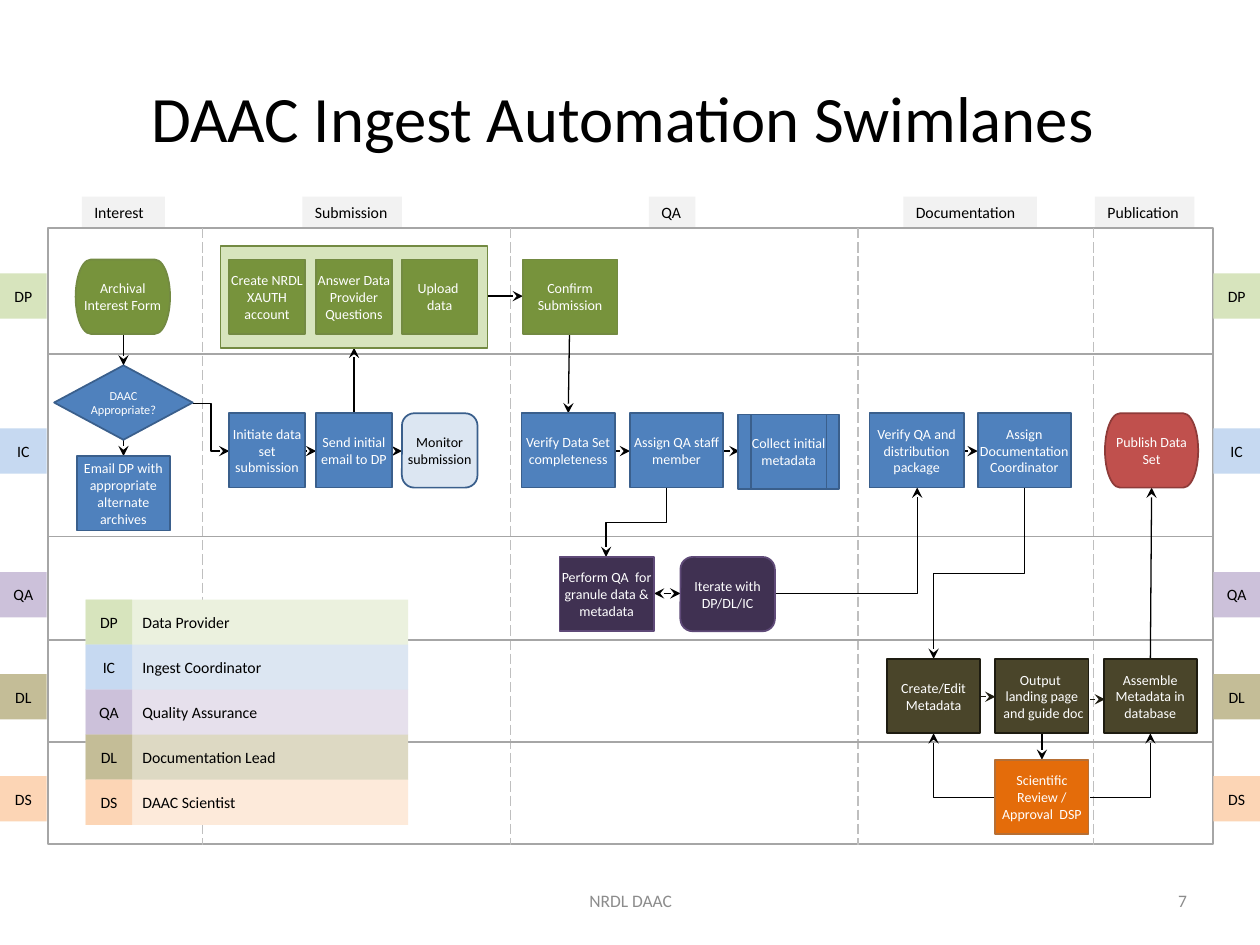
from lxml import etree
from pptx import Presentation
from pptx import util as u
from pptx.dml.color import RGBColor
from pptx.enum import dml, shapes, text
from pptx.oxml.ns import qn

BLACK, WHITE = RGBColor(0, 0, 0), RGBColor(255, 255, 255)
FOOTER_GRAY = RGBColor(0x8C, 0x8C, 0x8C)
HEADER_GRAY = RGBColor(0xF2, 0xF2, 0xF2)
FRAME_GRAY = RGBColor(0xA6, 0xA6, 0xA6)
DASH_GRAY = RGBColor(0xBF, 0xBF, 0xBF)
PALE_GREEN, PALE_BLUE = RGBColor(0xD7, 0xE4, 0xBD), RGBColor(0xDC, 0xE6, 0xF2)
GREEN, GREEN_EDGE = RGBColor(0x77, 0x93, 0x3C), RGBColor(0x73, 0x8A, 0x42)
BLUE, BLUE_EDGE = RGBColor(0x4F, 0x81, 0xBD), RGBColor(0x3A, 0x5F, 0x8C)
RED, RED_EDGE = RGBColor(0xC0, 0x50, 0x4D), RGBColor(0x8E, 0x3B, 0x39)
PURPLE, PURPLE_EDGE = RGBColor(0x40, 0x31, 0x52), RGBColor(0x5F, 0x4A, 0x78)
BROWN, BROWN_EDGE = RGBColor(0x4A, 0x45, 0x2A), RGBColor(0x1E, 0x1C, 0x11)
ORANGE, ORANGE_EDGE = RGBColor(0xE4, 0x6C, 0x0A), RGBColor(0xB7, 0x6F, 0x34)

Kind, Align, Anchor = shapes.MSO_SHAPE, text.PP_ALIGN, text.MSO_ANCHOR
RECT, STEP = Kind.RECTANGLE, Kind.FLOWCHART_PROCESS
ROUNDED, ENDPOINT = Kind.FLOWCHART_ALTERNATE_PROCESS, Kind.FLOWCHART_TERMINATOR

presentation = Presentation()
presentation.slide_width, presentation.slide_height = u.Inches(10), u.Inches(7.5)
slide = presentation.slides.add_slide(presentation.slide_layouts[6])


def add_box(words, left, top, width, height, kind=RECT, fill=None, edge=None, size=9,
            color=BLACK, align=Align.CENTER, anchor=Anchor.MIDDLE, insets=(0.1, 0.05, 0.1, 0.05)):
    """Add a shape, or a text box when kind is None; each line of words is a paragraph."""
    place = [u.Inches(value) for value in (left, top, width, height)]
    if kind is None:
        shape = slide.shapes.add_textbox(*place)
    else:
        shape = slide.shapes.add_shape(kind, *place)
        shape.shadow.inherit = False
        if fill is None:
            shape.fill.background()
        else:
            shape.fill.solid()
            shape.fill.fore_color.rgb = fill
        if edge is None:
            shape.line.fill.background()
        else:
            shape.line.color.rgb = edge
            shape.line.width = u.Pt(1)
    if not words:
        return
    frame = shape.text_frame
    frame.word_wrap = True
    frame.vertical_anchor = anchor
    frame.margin_left, frame.margin_top, frame.margin_right, frame.margin_bottom = map(u.Inches, insets)
    frame.text = words
    for paragraph in frame.paragraphs:
        paragraph.alignment = align
        font = paragraph.runs[0].font
        font.name, font.size, font.color.rgb = "Calibri", u.Pt(size), color


def add_line(x1, y1, x2, y2, bend=None, color=BLACK, dash=None, head=False, tail=True):
    """Add a connector; bend is None, "corner", "across" or "down" (starts vertically, ends lower left)."""
    if bend == "down":
        center_x, center_y = (x1 + x2) / 2, (y1 + y2) / 2
        half_width, half_height = (y2 - y1) / 2, (x1 - x2) / 2
        x1, x2 = center_x - half_width, center_x + half_width
        y1, y2 = center_y - half_height, center_y + half_height
    kind = shapes.MSO_CONNECTOR.ELBOW if bend else shapes.MSO_CONNECTOR.STRAIGHT
    connector = slide.shapes.add_connector(kind, *map(u.Inches, (x1, y1, x2, y2)))
    properties = connector._element.spPr
    if bend == "down":
        connector.rotation = 90
    if bend == "corner":
        properties.find(qn("a:prstGeom")).set("prst", "bentConnector2")
    connector.line.color.rgb = color
    connector.line.width = u.Pt(0.75)
    if dash:
        connector.line.dash_style = dash
    outline = properties.find(qn("a:ln"))
    for end, wanted in (("a:headEnd", head), ("a:tailEnd", tail)):
        if wanted:
            etree.SubElement(outline, qn(end)).set("type", "stealth")
    etree.SubElement(properties, qn("a:effectLst"))


add_box("DAAC Ingest Automation Swimlanes ", 0.5, 0.3, 9, 1.25, kind=None, size=37,
        insets=(0.08, 0.04, 0.08, 0.04))

# Phase headings
for phase, left, width in [("Interest", 0.65, 0.66), ("Submission", 2.4, 0.79), ("QA", 5.15, 0.37),
                           ("Documentation", 7.17, 1.06), ("Publication", 8.69, 0.79)]:
    add_box(phase, left, 1.56, width, 0.25, fill=HEADER_GRAY, align=Align.LEFT, anchor=Anchor.TOP)

# Swimlane grid
add_box("", 0.38, 1.81, 9.25, 4.89, edge=FRAME_GRAY)
for x in (1.61, 4.05, 6.81, 8.68):
    add_line(x, 1.81, x, 6.71, color=DASH_GRAY, dash=dml.MSO_LINE.LONG_DASH, tail=False)
for y in (2.81, 4.26, 5.08, 5.89):
    add_line(0.38, y, 9.63, y, color=FRAME_GRAY, tail=False)

# Lane tags on both sides, and the legend
roles = [
    ("DP", "Data Provider", 2.17, PALE_GREEN, RGBColor(0xEB, 0xF1, 0xDE)),
    ("IC", "Ingest Coordinator", 3.4, RGBColor(0xC6, 0xD9, 0xF1), PALE_BLUE),
    ("QA", "Quality Assurance", 4.54, RGBColor(0xCC, 0xC1, 0xDA), RGBColor(0xE6, 0xE0, 0xEC)),
    ("DL", "Documentation Lead", 5.35, RGBColor(0xC4, 0xBD, 0x97), RGBColor(0xDD, 0xD9, 0xC3)),
    ("DS", "DAAC Scientist", 6.16, RGBColor(0xFC, 0xD5, 0xB5), RGBColor(0xFD, 0xEA, 0xDA)),
]
for row, (code, role, lane_top, tag_fill, legend_fill) in enumerate(roles):
    legend_top = 4.76 + row * 0.357
    add_box(role, 0.68, legend_top, 2.56, 0.36, fill=legend_fill, align=Align.LEFT,
            insets=(0.45, 0.05, 0.1, 0.05))
    for left, top in ((0, lane_top), (9.63, lane_top), (0.68, legend_top)):
        add_box(code, left, top, 0.37, 0.36, fill=tag_fill)

# Arrows between steps
for points in [
    (9.13, 5.23, 9.14, 3.87), (0.98, 2.65, 0.98, 2.9), (2.81, 3.28, 2.81, 2.76),
    (3.87, 2.35, 4.15, 2.35), (4.52, 2.65, 4.51, 3.28), (0.98, 3.49, 0.98, 3.62),
    (4.89, 3.58, 5, 3.58), (5.74, 3.58, 5.87, 3.58), (2.42, 3.58, 2.51, 3.58),
    (3.11, 3.58, 3.19, 3.58), (7.65, 3.58, 7.76, 3.58), (8.27, 5.82, 8.27, 6.03),
]:
    add_line(*points)
add_line(5.19, 4.71, 5.4, 4.71, head=True)
add_line(7.78, 5.53, 7.9, 5.53, color=BROWN_EDGE)
add_line(8.65, 5.55, 8.77, 5.55, color=BROWN_EDGE)
add_line(1.53, 3.2, 1.82, 3.58, bend="across")
for points in [(5.29, 3.87, 4.81, 4.42), (8.13, 3.87, 7.41, 5.23)]:
    add_line(*points, bend="down")
for points in [(8.65, 6.33, 9.13, 5.82), (6.15, 4.71, 7.28, 3.87), (7.9, 6.33, 7.41, 5.82)]:
    add_line(*points, bend="corner")

# Process steps
add_box("", 1.75, 1.95, 2.12, 0.81, kind=STEP, fill=PALE_GREEN, edge=GREEN_EDGE)
add_box("DAAC Appropriate?", 0.43, 2.9, 1.1, 0.59, kind=Kind.FLOWCHART_DECISION, fill=BLUE,
        edge=BLUE_EDGE, size=7, color=WHITE, insets=(0, 0, 0, 0))
step_groups = [
    (GREEN, GREEN_EDGE, [
        ("Archival Interest Form", 0.6, 2.06, 0.75, ENDPOINT),
        ("Create NRDL XAUTH account", 1.82, 2.06, 0.6, STEP),
        ("Answer Data Provider Questions", 2.51, 2.06, 0.6, STEP),
        ("Upload \ndata", 3.19, 2.06, 0.6, STEP),
        ("Confirm Submission", 4.15, 2.06, 0.75, STEP)]),
    (BLUE, BLUE_EDGE, [
        ("Email DP with appropriate alternate archives", 0.61, 3.62, 0.74, STEP),
        ("Initiate data set submission", 1.82, 3.28, 0.6, STEP),
        ("Send initial email to DP", 2.51, 3.28, 0.6, STEP),
        ("Verify Data Set completeness", 4.14, 3.28, 0.74, STEP),
        ("Assign QA staff member", 5, 3.28, 0.74, RECT),
        ("Collect initial metadata", 5.86, 3.29, 0.8, Kind.FLOWCHART_PREDEFINED_PROCESS),
        ("Verify QA and distribution package", 6.9, 3.28, 0.75, STEP),
        ("Assign Documentation Coordinator", 7.76, 3.28, 0.74, STEP)]),
    (PALE_BLUE, BLUE_EDGE, [("Monitor submission", 3.19, 3.28, 0.6, ROUNDED)]),
    (RED, RED_EDGE, [("Publish Data Set", 8.77, 3.28, 0.74, ENDPOINT)]),
    (PURPLE, PURPLE_EDGE, [
        ("Perform QA  for granule data & metadata", 4.44, 4.42, 0.75, STEP),
        ("Iterate with DP/DL/IC", 5.4, 4.42, 0.75, ROUNDED)]),
    (BROWN, BROWN_EDGE, [
        ("Create/Edit Metadata", 7.04, 5.23, 0.74, STEP),
        ("Output \nlanding page\n and guide doc", 7.9, 5.23, 0.74, STEP),
        ("Assemble Metadata in database", 8.76, 5.23, 0.74, STEP)]),
    (ORANGE, ORANGE_EDGE, [("Scientific Review / Approval  DSP", 7.9, 6.03, 0.74, STEP)]),
]
for fill, edge, steps in step_groups:
    for words, left, top, width, kind in steps:
        add_box(words, left, top, width, 0.59, kind=kind, fill=fill, edge=edge, size=8,
                color=BLACK if fill == PALE_BLUE else WHITE, insets=(0, 0, 0, 0))

# Footer
for words, left, width, align in [("NRDL DAAC", 3.42, 3.17, Align.CENTER), ("7", 7.17, 2.33, Align.RIGHT)]:
    add_box(words, left, 6.95, width, 0.4, kind=None, size=10, color=FOOTER_GRAY, align=align,
            insets=(0.08, 0.04, 0.08, 0.04))

presentation.save("out.pptx")
